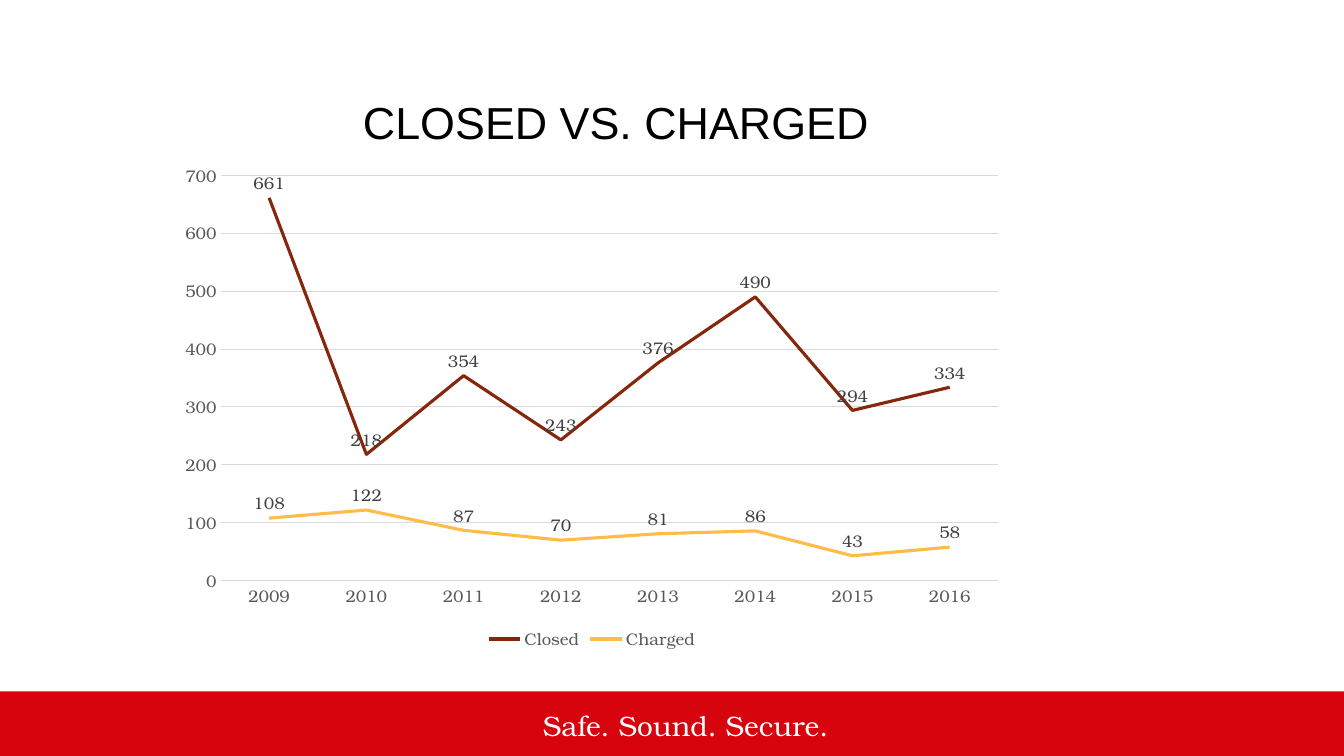
"""Build a slide with a line chart of closed and charged cases by year."""
from dataclasses import dataclass

from pptx import Presentation
from pptx.chart.data import CategoryChartData
from pptx.dml.color import RGBColor
from pptx.enum.chart import XL_CHART_TYPE, XL_LABEL_POSITION, XL_LEGEND_POSITION
from pptx.enum.chart import XL_MARKER_STYLE, XL_TICK_MARK
from pptx.enum.shapes import MSO_SHAPE
from pptx.enum.text import MSO_ANCHOR, MSO_AUTO_SIZE, PP_ALIGN
from pptx.util import Inches, Pt

LINE_CHART = XL_CHART_TYPE.LINE
LABEL_ABOVE = XL_LABEL_POSITION.ABOVE
LEGEND_BOTTOM = XL_LEGEND_POSITION.BOTTOM
NO_MARKER = XL_MARKER_STYLE.NONE
NO_TICK = XL_TICK_MARK.NONE
RECTANGLE = MSO_SHAPE.RECTANGLE
TOP = MSO_ANCHOR.TOP
GROW = MSO_AUTO_SIZE.SHAPE_TO_FIT_TEXT
CENTER = PP_ALIGN.CENTER

YEARS = [str(year) for year in range(2009, 2017)]
CASES = {
    "Closed": [661, 218, 354, 243, 376, 490, 294, 334],
    "Charged": [108, 122, 87, 70, 81, 86, 43, 58],
}


@dataclass(frozen=True)
class Theme:
    title_font: str = "Arial"
    body_font: str = "TeX Gyre Bonum"
    title_size: int = 32
    slogan_size: int = 20
    chart_size: int = 12
    line_width: float = 2.25
    grid_width: float = 0.75
    title: str = "000000"
    slogan: str = "FFFFFF"
    band: str = "D7030D"
    axis: str = "595959"
    label: str = "404040"
    grid: str = "D9D9D9"
    series: tuple = ("86270D", "FFBD47")


class SlideBuilder:
    def __init__(self, page, theme):
        self.page = page
        self.theme = theme

    def style(self, font, name, size, color):
        font.name = name
        font.size = Pt(size)
        font.color.rgb = RGBColor.from_string(color)

    def place(self, shape, left, top, width, height):
        shape.left, shape.top = Inches(left), Inches(top)
        shape.width, shape.height = Inches(width), Inches(height)

    def set_text(self, box, text, name, size, color):
        frame = box.text_frame
        frame.text = text
        frame.word_wrap = True
        frame.auto_size = GROW
        frame.vertical_anchor = TOP
        para = frame.paragraphs[0]
        para.alignment = CENTER
        self.style(para.runs[0].font, name, size, color)

    def title(self, text, *area):
        box = self.page.shapes.title
        self.place(box, *area)
        self.set_text(box, text, self.theme.title_font, self.theme.title_size, self.theme.title)

    def slogan(self, text, *area):
        box = self.page.shapes.add_textbox(*map(Inches, area))
        self.set_text(box, text, self.theme.body_font, self.theme.slogan_size, self.theme.slogan)

    def band(self, *area):
        band = self.page.shapes.add_shape(RECTANGLE, *map(Inches, area))
        band.shadow.inherit = False
        band.fill.solid()
        band.fill.fore_color.rgb = RGBColor.from_string(self.theme.band)
        band.line.fill.background()

    def stroke(self, line, color, width):
        line.color.rgb = RGBColor.from_string(color)
        line.width = Pt(width)

    def chart_text(self, font, color):
        self.style(font, self.theme.body_font, self.theme.chart_size, color)

    def line_chart(self, categories, series_values, *area):
        theme = self.theme
        data = CategoryChartData()
        data.categories = categories
        for name, values in series_values.items():
            data.add_series(name, values)
        chart = self.page.shapes.add_chart(LINE_CHART, *map(Inches, area), data).chart
        chart.has_title = False
        self.chart_text(chart.font, theme.axis)

        chart.has_legend = True
        chart.legend.position = LEGEND_BOTTOM
        chart.legend.include_in_layout = False
        self.chart_text(chart.legend.font, theme.axis)

        for axis in (chart.category_axis, chart.value_axis):
            axis.major_tick_mark = axis.minor_tick_mark = NO_TICK
            self.chart_text(axis.tick_labels.font, theme.axis)
        self.stroke(chart.category_axis.format.line, theme.grid, theme.grid_width)
        values_axis = chart.value_axis
        values_axis.minimum_scale, values_axis.maximum_scale = 0, 700
        values_axis.major_unit = 100
        values_axis.format.line.fill.background()
        self.stroke(values_axis.major_gridlines.format.line, theme.grid, theme.grid_width)

        plot = chart.plots[0]
        plot.vary_by_categories = False
        for series, color in zip(plot.series, theme.series):
            series.smooth = False
            series.marker.style = NO_MARKER
            self.stroke(series.format.line, color, theme.line_width)
            labels = series.data_labels
            labels.show_value = True
            labels.position = LABEL_ABOVE
            self.chart_text(labels.font, theme.label)


def main():
    deck = Presentation()
    deck.slide_width, deck.slide_height = Inches(13.33), Inches(7.5)
    page = deck.slides.add_slide(deck.slide_layouts[5])
    builder = SlideBuilder(page, Theme())
    builder.band(0, 6.86, 13.33, 0.64)
    builder.slogan("Safe. Sound. Secure. ", 4.84, 6.98, 4.01, 0.44)
    builder.line_chart(YEARS, CASES, 1.67, 1.53, 8.4, 4.96)
    builder.title("CLOSED VS. CHARGED", 3.08, 0.89, 6.06, 0.64)
    deck.save("out.pptx")


if __name__ == "__main__":
    main()
